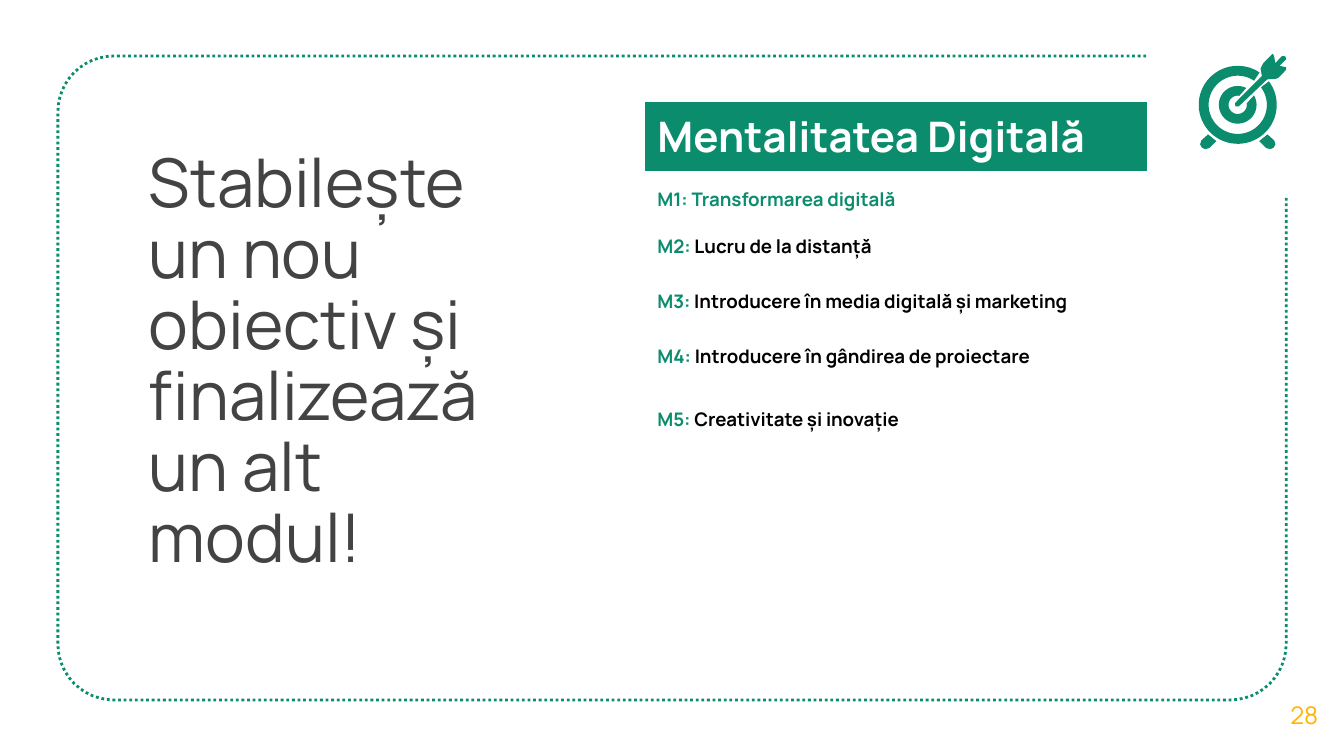
from math import cos, radians, sin

from pptx import Presentation
from pptx.dml.color import RGBColor
from pptx.enum.dml import MSO_LINE
from pptx.enum.text import MSO_ANCHOR, PP_ALIGN
from pptx.util import Pt

COLORS = {"green": "0A8C6D", "gray": "434343", "amber": "FFB600",
          "white": "FFFFFF", "black": "000000"}
FONT = "Manrope"
MODULES = ["Transformarea digitală", "Lucru de la distanță",
           "Introducere în media digitală și marketing",
           "Introducere în gândirea de proiectare", "Creativitate și inovație"]


def rgb(name):
    return RGBColor.from_string(COLORS[name])


def write(tf, *parts, size, bold=False, align=PP_ALIGN.LEFT, spacing=None):
    """Fill the first paragraph with (text, colour) parts."""
    p = tf.paragraphs[0]
    p.alignment = align
    if spacing:
        p.line_spacing = spacing
    for text, color in parts:
        r = p.add_run()
        r.text = text
        r.font.name, r.font.size, r.font.bold = FONT, Pt(size), bold
        r.font.color.rgb = rgb(color)


def text_box(s, x, y, w, h, *parts, anchor=MSO_ANCHOR.TOP, top=7.2, **fmt):
    tf = s.shapes.add_textbox(Pt(x), Pt(y), Pt(w), Pt(h)).text_frame
    tf.word_wrap = True
    tf.vertical_anchor = anchor
    tf.margin_left = tf.margin_right = tf.margin_bottom = Pt(7.2)
    tf.margin_top = Pt(top)
    write(tf, *parts, **fmt)


def arc(cx, cy, radius, start, end, steps):
    """Points along an arc; angles in degrees, clockwise from the right."""
    angles = [radians(start + (end - start) * i / steps) for i in range(steps + 1)]
    return [(cx + radius * cos(a), cy + radius * sin(a)) for a in angles]


def outline(s, x, y, points, close=True):
    pts = [(Pt(x + px), Pt(y + py)) for px, py in points]
    builder = s.shapes.build_freeform(*pts[0], scale=1.0)
    builder.add_line_segments(pts[1:], close=close)
    sp = builder.convert_to_shape()
    sp.shadow.inherit = False
    return sp


def dotted_frame(s, x, y, w, h, radius=30):
    # Open at the top right corner, where the icon stands
    points = [(w - 75, 0)]
    points += arc(radius, radius, radius, 270, 180, 12)
    points += arc(radius, h - radius, radius, 180, 90, 12)
    points += arc(w - radius, h - radius, radius, 90, 0, 12)
    points.append((w, 75))
    sp = outline(s, x, y, points, close=False)
    sp.fill.background()
    sp.line.color.rgb = rgb("green")
    sp.line.width = Pt(1.5)
    sp.line.dash_style = MSO_LINE.ROUND_DOT


def target_icon(s, x, y):
    cx, cy = 20.9, 27.4
    # Two rings, cut where the arrow enters
    outer = arc(cx, cy, 20.9, -37, 304, 60) + arc(cx, cy, 15.6, 304, -37, 60)
    inner = arc(cx, cy, 10.1, -30, 297, 48) + arc(cx, cy, 4.9, 280, -9, 36)
    # Feet
    left_foot = [(5, 43.2), (1.4, 46.4), (0.7, 48.6), (1.8, 50.4),
                 (3.6, 51.1), (5.8, 50.4), (9.4, 46.8)]
    right_foot = [(2 * cx - px, py) for px, py in left_foot]
    arrow = [(39.6, 0), (34.6, 5), (33.1, 7.9), (33.8, 11.9), (19.4, 26.4),
             (19.6, 28.2), (21.4, 28.2), (36.7, 13.7), (41, 13.5),
             (42.5, 13), (46.8, 8.6), (46.8, 7.2), (43.2, 6.5),
             (46.8, 2.9), (46.4, 1.4), (44.6, 1.2), (41, 5), (40.3, 1)]
    for points in (outer, inner, left_foot, right_foot, arrow):
        sp = outline(s, x, y, points)
        sp.fill.solid()
        sp.fill.fore_color.rgb = rgb("green")
        sp.line.fill.background()


def module_table(s, x, y, w):
    heights = [38, 29.5, 29.5, 29.5, 34, 29.5]
    table = s.shapes.add_table(len(heights), 1, Pt(x), Pt(y), Pt(w),
                               Pt(sum(heights))).table
    table.first_row = table.horz_banding = False
    table.columns[0].width = Pt(w)
    for i, height in enumerate(heights):
        table.rows[i].height = Pt(height)
        cell = table.cell(i, 0)
        cell.margin_left = cell.margin_right = Pt(7.2)
        cell.margin_top = cell.margin_bottom = Pt(3.6)
        if i == 0:
            cell.fill.solid()
            cell.fill.fore_color.rgb = rgb("green")
            write(cell.text_frame, ("Mentalitatea Digitală", "white"),
                  size=22.5, bold=True)
            continue
        cell.fill.background()
        # The first module is highlighted
        if i == 1:
            cell.vertical_anchor = MSO_ANCHOR.MIDDLE
        write(cell.text_frame, (f"M{i}: ", "green"),
              (MODULES[i - 1], "green" if i == 1 else "black"),
              size=10, bold=True)


def main():
    prs = Presentation()
    prs.slide_width, prs.slide_height = Pt(720), Pt(405)
    s = prs.slides.add_slide(prs.slide_layouts[6])

    dotted_frame(s, 31, 30, 658, 345)
    text_box(s, 72.7, 70.5, 214, 67.5,
             ("Stabilește un nou obiectiv și finalizează un alt modul!", "gray"),
             size=36, spacing=0.88, top=10.5)
    text_box(s, 677.5, 361.5, 42.5, 43, ("28", "amber"), size=13,
             anchor=MSO_ANCHOR.MIDDLE, align=PP_ALIGN.CENTER)
    target_icon(s, 642.2, 28.8)
    module_table(s, 345, 54, 270)
    prs.save("out.pptx")


if __name__ == "__main__":
    main()
